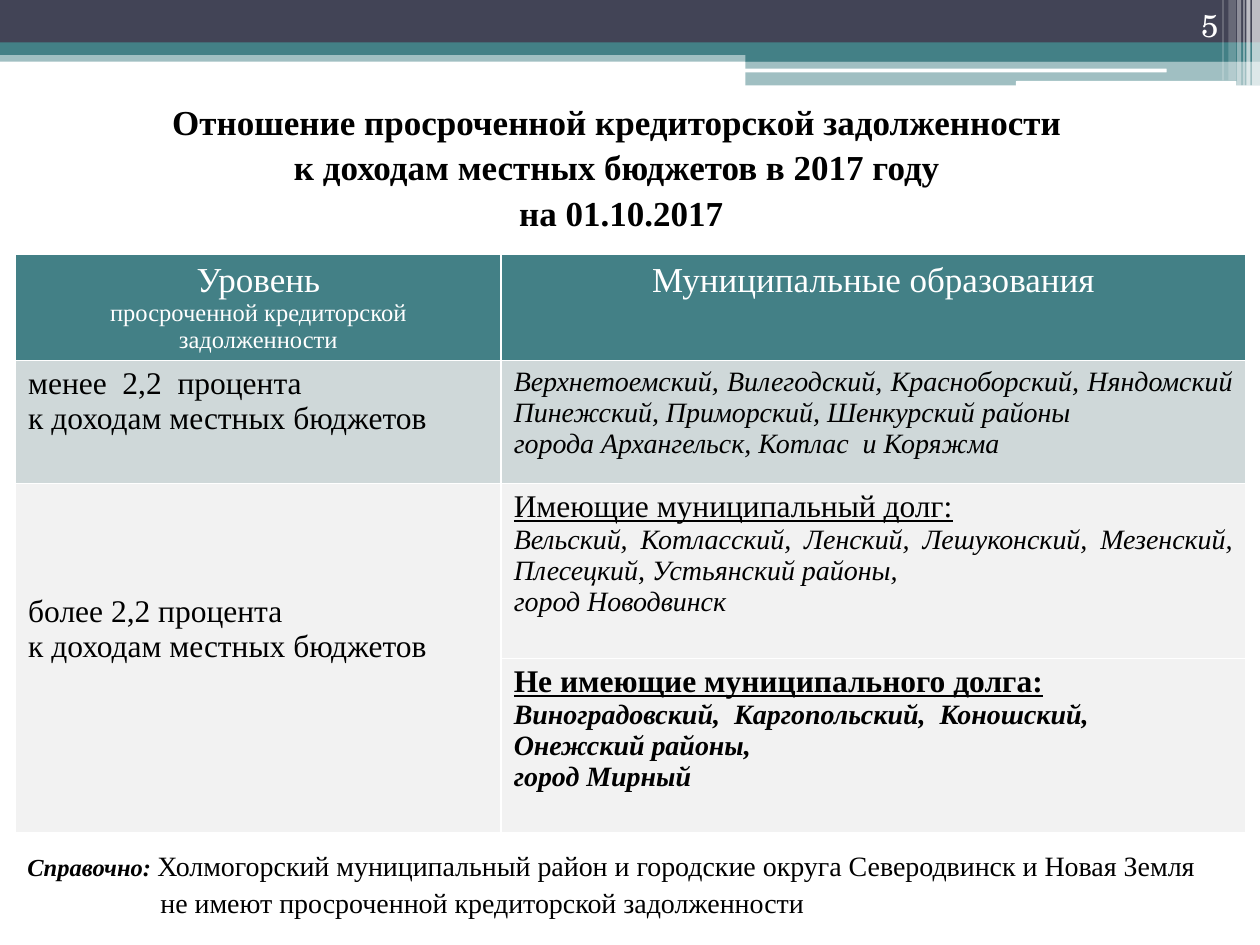
"""Build a slide relating overdue payables to local budget revenues."""
from dataclasses import dataclass

from lxml import etree
from pptx import Presentation
from pptx.dml.color import RGBColor
from pptx.enum.shapes import MSO_SHAPE
from pptx.enum.text import MSO_ANCHOR, MSO_AUTO_SIZE, PP_ALIGN
from pptx.oxml.ns import qn
from pptx.util import Pt

RECT, ROUND = MSO_SHAPE.RECTANGLE, MSO_SHAPE.ROUNDED_RECTANGLE
LEFT, CENTER, RIGHT, JUSTIFY = PP_ALIGN.LEFT, PP_ALIGN.CENTER, PP_ALIGN.RIGHT, PP_ALIGN.JUSTIFY
TOP, MIDDLE, BOTTOM = MSO_ANCHOR.TOP, MSO_ANCHOR.MIDDLE, MSO_ANCHOR.BOTTOM
NO_FIT = MSO_AUTO_SIZE.NONE
SERIF, SCHOOL = "Times New Roman", "TeX Gyre Schola"
WHITE, BLACK, TEAL, NAVY = "FFFFFF", "000000", "438086", "424456"
BAND, PALE = "CFD8D9", "F2F2F2"


@dataclass
class Bar:
    """A filled bar of the header decoration."""
    x: float
    y: float
    w: float
    h: float
    color: str
    alpha: int = 100
    kind: int = RECT


@dataclass
class Run:
    """A piece of text with one format."""
    text: str
    size: float
    bold: bool = False
    italic: bool = False
    underline: bool = False
    color: str = BLACK
    font: str = SERIF


@dataclass
class Para:
    """A paragraph made of runs."""
    runs: list[Run]
    align: int = LEFT
    spacing: float = 1
    indent: float = 0


@dataclass
class Cell:
    """A table cell with its place, fill and text."""
    row: int
    col: int
    fill: str
    paras: list[Para]
    top: float = 3.6


BARS = [
    Bar(0, 28.8, 720, 6.5, TEAL, 50),
    Bar(0, 0, 720, 24.5, NAVY),
    Bar(0, 24.2, 720, 7.2, TEAL),
    Bar(426, 28, 294, 7.2, TEAL),
    Bar(426, 34.9, 294, 14, TEAL, 50),
    Bar(425.5, 39.2, 241.2, 2.2, WHITE, kind=ROUND),
    Bar(580.5, 46.3, 126, 2.9, WHITE, kind=ROUND),
    Bar(715.5, 0, 4.5, 49, WHITE, 65),
    Bar(712.3, 0, 2.2, 49, WHITE, 65),
    Bar(710.5, 0, 0.8, 49, WHITE, 60),
    Bar(707, 0, 2.2, 49, WHITE, 40),
    Bar(702, 0, 4.3, 46, WHITE, 20),
    Bar(698.5, 0, 0.8, 46, WHITE, 30),
]
TITLE = [
    "Отношение просроченной кредиторской задолженности ",
    "к доходам местных бюджетов в 2017 году ",
    "на 01.10.2017",
]
ROWS = [52, 70.3, 100, 100]
COLS = [277.5, 425.5]


def heading(text: str, size: float) -> Para:
    """Return a centred white line of the table header."""
    return Para([Run(text, size, color=WHITE)], CENTER)


def level(text: str) -> Para:
    """Return a line of the level column."""
    return Para([Run(text, 18)])


def group(text: str, bold: bool = False) -> Para:
    """Return an underlined group heading."""
    return Para([Run(text, 18, bold, underline=True)])


def places(text: str, align: int = JUSTIFY, bold: bool = False) -> Para:
    """Return an italic line of municipalities."""
    return Para([Run(text, 16, bold, italic=True)], align)


CELLS = [
    Cell(0, 0, TEAL, [heading("Уровень", 20),
                      heading("просроченной кредиторской задолженности", 14)]),
    Cell(0, 1, TEAL, [heading("Муниципальные образования", 20)]),
    Cell(1, 0, BAND, [level("менее  2,2  процента"), level("к доходам местных бюджетов")]),
    Cell(1, 1, BAND, [
        places("Верхнетоемский, Вилегодский, Красноборский, Няндомский "
               "Пинежский, Приморский, Шенкурский районы "),
        places("города Архангельск, Котлас  и Коряжма")]),
    Cell(2, 0, PALE, [level("более 2,2 процента"), level("к доходам местных бюджетов")], 63.5),
    Cell(2, 1, PALE, [
        group("Имеющие муниципальный долг:"),
        places("Вельский, Котласский, Ленский, Лешуконский, Мезенский, "
               "Плесецкий, Устьянский районы,"),
        places("город Новодвинск")]),
    Cell(3, 1, PALE, [
        group("Не имеющие муниципального долга:", True),
        places("Виноградовский,  Каргопольский,  Коношский,", LEFT, True),
        places("Онежский районы,", LEFT, True),
        places("город Мирный", LEFT, True)]),
]
NOTE = [
    Para([Run("Справочно: ", 14, True, True),
          Run("Холмогорский муниципальный район и городские округа "
              "Северодвинск и Новая Земля", 16)], spacing=1.1),
    Para([Run("не имеют просроченной кредиторской задолженности", 16)], spacing=1.1, indent=76),
]


def rgb(value: str) -> RGBColor:
    """Turn a hex string into a colour."""
    return RGBColor.from_string(value)


def add_run(p, run: Run) -> None:
    """Add one formatted run to a paragraph."""
    r = p.add_run()
    r.text = run.text
    f = r.font
    f.name, f.size, f.bold = run.font, Pt(run.size), run.bold
    f.italic, f.underline = run.italic, run.underline
    f.color.rgb = rgb(run.color)


def write(tf, paras: list[Para]) -> None:
    """Fill a text frame with paragraphs."""
    for i, para in enumerate(paras):
        p = tf.add_paragraph() if i else tf.paragraphs[0]
        p.alignment, p.line_spacing = para.align, para.spacing
        if para.indent:
            p._p.get_or_add_pPr().set("marL", str(Pt(para.indent)))
        for run in para.runs:
            add_run(p, run)


def add_bar(slide, bar: Bar) -> None:
    """Draw one bar of the header decoration."""
    sp = slide.shapes.add_shape(bar.kind, Pt(bar.x), Pt(bar.y), Pt(bar.w), Pt(bar.h))
    sp.shadow.inherit = False
    sp.fill.solid()
    sp.fill.fore_color.rgb = rgb(bar.color)
    sp.line.fill.background()
    if bar.alpha < 100:
        clr = sp._element.spPr.find(qn("a:solidFill"))[0]
        etree.SubElement(clr, qn("a:alpha")).set("val", str(bar.alpha * 1000))


def add_title(slide) -> None:
    """Place the three-line title."""
    sp = slide.shapes.title
    sp.left, sp.top, sp.width, sp.height = Pt(31), Pt(54.7), Pt(648), Pt(79.2)
    tf = sp.text_frame
    tf.auto_size, tf.vertical_anchor = NO_FIT, MIDDLE
    p = tf.paragraphs[0]
    p.alignment, p.line_spacing = CENTER, 1.08
    for i, line in enumerate(TITLE):
        if i:
            p.add_line_break()
        add_run(p, Run(line, 20, True))


def add_table(slide) -> None:
    """Draw the table of levels and municipalities."""
    table = slide.shapes.add_table(len(ROWS), len(COLS), Pt(8.9), Pt(145.5),
                                   Pt(sum(COLS)), Pt(sum(ROWS))).table
    for row, height in zip(table.rows, ROWS):
        row.height = Pt(height)
    for col, width in zip(table.columns, COLS):
        col.width = Pt(width)
    table.cell(2, 0).merge(table.cell(3, 0))
    for item in CELLS:
        cell = table.cell(item.row, item.col)
        cell.fill.solid()
        cell.fill.fore_color.rgb = rgb(item.fill)
        cell.margin_top = Pt(item.top)
        write(cell.text_frame, item.paras)


def add_text(slide, x: float, y: float, w: float, h: float,
             paras: list[Para], anchor: int = TOP) -> None:
    """Add a wrapped text box."""
    tf = slide.shapes.add_textbox(Pt(x), Pt(y), Pt(w), Pt(h)).text_frame
    tf.word_wrap, tf.vertical_anchor = True, anchor
    write(tf, paras)


def main() -> None:
    """Build and save the slide."""
    prs = Presentation()
    prs.slide_width, prs.slide_height = Pt(720), Pt(540)
    slide = prs.slides.add_slide(prs.slide_layouts[5])
    for bar in BARS:
        add_bar(slide, bar)
    add_title(slide)
    add_table(slide)
    add_text(slide, 8.6, 479.5, 698, 46, NOTE)
    number = Para([Run("5", 18, color=WHITE, font=SCHOOL)], RIGHT)
    add_text(slide, 643.7, 0, 59.8, 28.8, [number], BOTTOM)
    prs.save("out.pptx")


if __name__ == "__main__":
    main()
